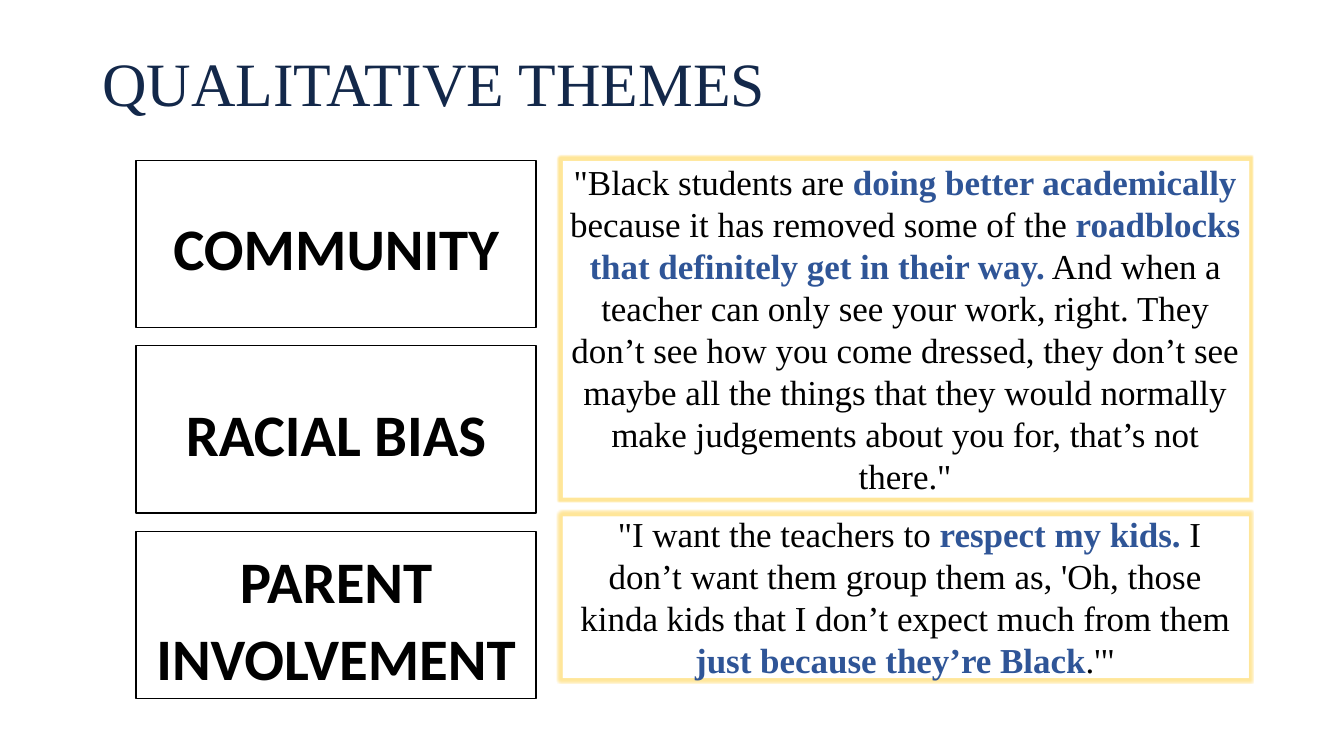
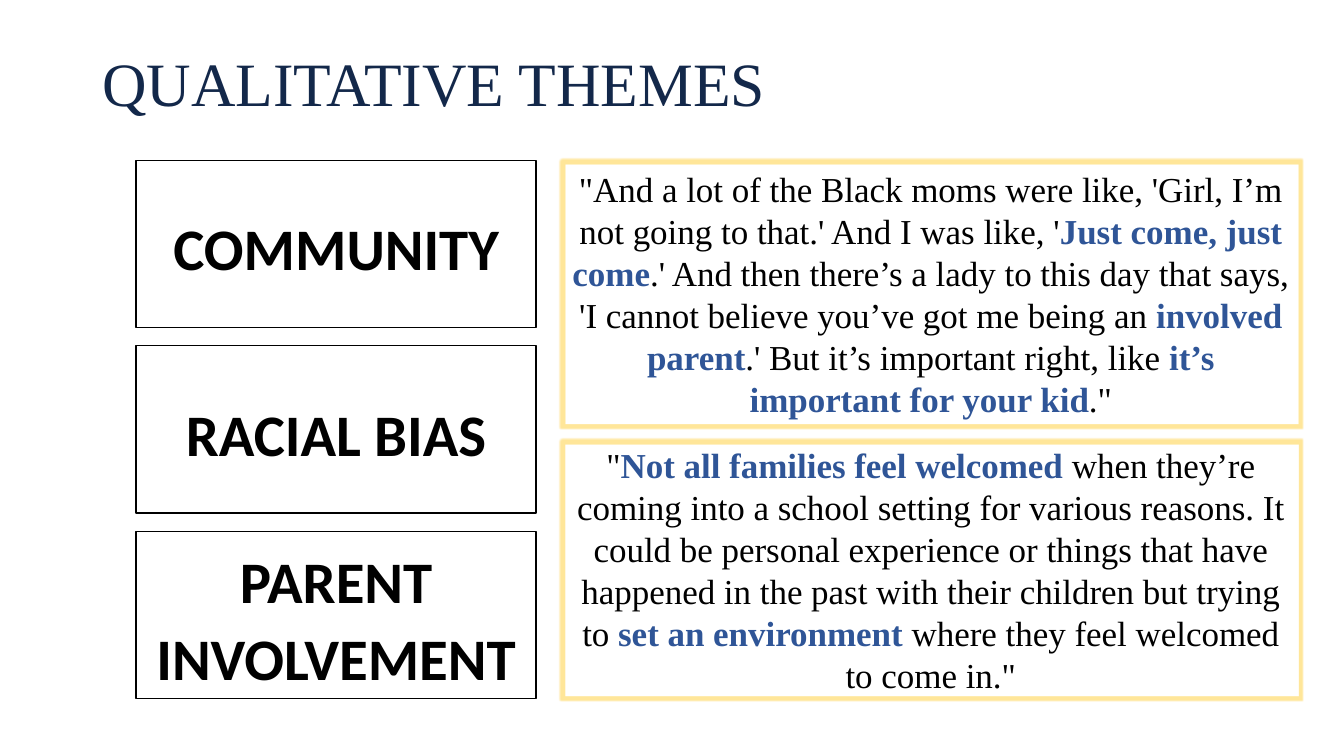
from lxml import etree
from pptx import Presentation
from pptx.dml.color import RGBColor
from pptx.enum import shapes, text as text_enum
from pptx.oxml.ns import qn
from pptx.util import Pt

NAVY = RGBColor(0x13, 0x28, 0x4A)
BLUE = RGBColor(0x2F, 0x55, 0x97)
GOLD = RGBColor(0xFF, 0xE6, 0x99)
BLACK = RGBColor(0, 0, 0)
WHITE = RGBColor(255, 255, 255)
SERIF = "Times New Roman"
SANS = "Calibri"

TITLE = "QUALITATIVE THEMES"
THEMES = ["COMMUNITY", "RACIAL BIAS", "PARENT INVOLVEMENT"]
QUOTE_GAP = 10

SLIDES = [
    {
        "active": "RACIAL BIAS",
        "left": 399.6, "top": 112.3, "width": 493.92,
        "quotes": [
            (244.1, "\"Black students are *doing better academically *because it has "
                    "removed some of the *roadblocks that definitely get in their way.*"
                    " And when a teacher can only see your work, right. They don’t see "
                    "how you come dressed, they don’t see maybe all the things that they "
                    "would normally make judgements about you for, that’s not there.\""),
            (119.5, " \"I want the teachers to *respect my kids.* I don’t want them "
                    "group them as, 'Oh, those kinda kids that I don’t expect much "
                    "from them *just because they’re Black*.'\""),
        ],
    },
    {
        "active": "PARENT INVOLVEMENT",
        "left": 401, "top": 114.5, "width": 527.76,
        "quotes": [
            (190.1, "\"And a lot of the Black moms were like, 'Girl, I’m not going to "
                    "that.' And I was like, '*Just come, just come*.' And then there’s a "
                    "lady to this day that says, 'I cannot believe you’ve got me being an "
                    "*involved parent*.' But it’s important right, like *it’s important "
                    "for your kid*.\""),
            (184.3, "\"*Not all families feel welcomed* when they’re coming into a "
                    "school setting for various reasons. It could be personal experience "
                    "or things that have happened in the past with their children but "
                    "trying to *set an environment* where they feel welcomed to come "
                    "in.\""),
        ],
    },
]


def write(shape, content, font, size, color=BLACK, bold=False, emphasis=BLUE,
          align=text_enum.PP_ALIGN.CENTER, spacing=1.0):
    frame = shape.text_frame
    frame.word_wrap = True
    frame.auto_size = text_enum.MSO_AUTO_SIZE.NONE
    frame.vertical_anchor = text_enum.MSO_ANCHOR.MIDDLE
    paragraph = frame.paragraphs[0]
    paragraph.alignment = align
    paragraph.line_spacing = spacing
    paragraph.space_before = Pt(0)
    for index, part in enumerate(content.split("*")):
        emphasized = index % 2 == 1
        run = paragraph.add_run()
        run.text = part
        run.font.name = font
        run.font.size = Pt(size)
        run.font.bold = bold or emphasized
        run.font.color.rgb = emphasis if emphasized else color
    return paragraph


class ThemeDeck:
    def __init__(self):
        self.presentation = Presentation()
        self.presentation.slide_width = Pt(960)
        self.presentation.slide_height = Pt(540)
        self.slide = None

    def add_slide(self):
        layout = self.presentation.slide_layouts[1]
        self.slide = self.presentation.slides.add_slide(layout)

    def place(self, shape, left, top, width, height):
        shape.left, shape.top = Pt(left), Pt(top)
        shape.width, shape.height = Pt(width), Pt(height)

    def rectangle(self):
        shape = self.slide.shapes.add_shape(
            shapes.MSO_SHAPE.RECTANGLE, Pt(0), Pt(0), Pt(1), Pt(1))
        shape.shadow.inherit = False
        return shape

    def paint(self, shape, line, weight):
        shape.fill.solid()
        shape.fill.fore_color.rgb = WHITE
        shape.line.color.rgb = line
        shape.line.width = Pt(weight)

    def title(self, content):
        shape = self.slide.shapes.title
        self.place(shape, 66, 9.5, 828, 104.5)
        write(shape, content, SERIF, 44, NAVY,
              align=text_enum.PP_ALIGN.LEFT, spacing=0.9)

    def theme(self, index, content, active):
        shape = self.slide.placeholders[1] if index == 0 else self.rectangle()
        self.place(shape, 97.2, 114.5 + 132.5 * index, 285.8, 119.5)
        self.paint(shape, BLACK, 1)
        if not active:
            color = shape.fill._xPr.find(qn("a:solidFill"))[0]
            etree.SubElement(color, qn("a:alpha"), val="50000")
        paragraph = write(shape, content, SANS, 42, bold=True, spacing=1.1)
        if index == 0:
            properties = paragraph._p.get_or_add_pPr()
            properties.set("marL", "0")
            properties.set("indent", "0")
            etree.SubElement(properties, qn("a:buNone"))

    def quote(self, content, left, top, width, height):
        shape = self.rectangle()
        self.place(shape, left, top, width, height)
        self.paint(shape, GOLD, 4.5)
        effects = shape._element.spPr.find(qn("a:effectLst"))
        etree.SubElement(effects, qn("a:softEdge"), rad="12700")
        write(shape, content, SERIF, 25)


def main():
    deck = ThemeDeck()
    for page in SLIDES:
        deck.add_slide()
        deck.title(TITLE)
        for index, theme in enumerate(THEMES):
            deck.theme(index, theme, theme == page["active"])
        top = page["top"]
        for height, content in page["quotes"]:
            deck.quote(content, page["left"], top, page["width"], height)
            top += height + QUOTE_GAP
    deck.presentation.save("out.pptx")


if __name__ == "__main__":
    main()
